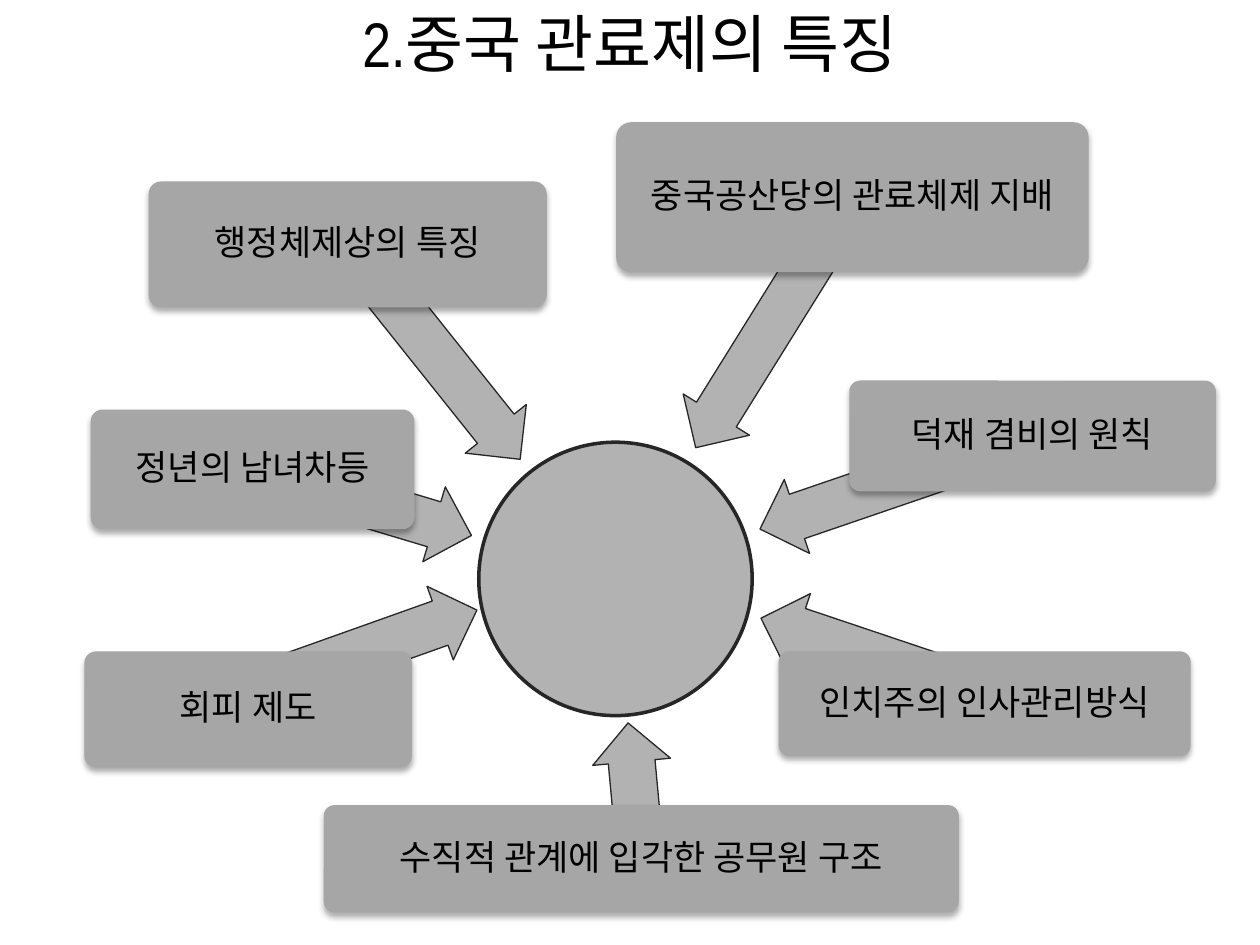
import pptx
import pptx.util
import pptx.oxml
import pptx.dml.color
import pptx.enum.shapes
import pptx.enum.text
from lxml import etree

Inches = pptx.util.Inches
Pt = pptx.util.Pt
SHAPE = pptx.enum.shapes.MSO_SHAPE
KOREAN = "Noto Sans CJK KR"
A = "http://schemas.openxmlformats.org/drawingml/2006/main"

HUB = (3.8, 3.51, 2.17, 2.17)
ARROW_HEIGHT = 0.62

# label, box (left, top, width, height), arrow (left, top, width, rotation)
FEATURES = [
    ("수직적 관계에 입각한 공무원 구조", (2.57, 6.39, 5.04, 0.85), (4.49, 5.97, 1.09, 84.7)),
    ("회피 제도", (0.67, 5.17, 2.6, 0.92), (1.94, 4.85, 1.9, 160.4)),
    ("정년의 남녀차등", (0.72, 3.25, 2.57, 0.95), (1.97, 3.68, 1.81, 196.7)),
    ("행정체제상의 특징", (1.18, 1.44, 3.16, 1), (2.35, 2.48, 2.19, 231.4)),
    ("중국공산당의 관료체제 지배", (4.89, 0.97, 3.75, 1.19), (4.97, 2.25, 2.34, 301.9)),
    ("덕재 겸비의 원칙", (6.74, 3.02, 2.91, 0.88), (5.97, 3.52, 2.28, 341.1)),
    ("인치주의 인사관리방식", (6.18, 5.17, 3.27, 0.83), (5.99, 4.9, 1.9, 18.6)),
]


def color(value):
    return pptx.dml.color.RGBColor.from_string(value)


def add_shape(s, kind, box, fill, line_width=0):
    sp = s.shapes.add_shape(kind, *map(Inches, box))
    sp.shadow.inherit = False
    sp.fill.solid()
    sp.fill.fore_color.rgb = color(fill)
    if line_width:
        sp.line.color.rgb = color("262626")
        sp.line.width = Pt(line_width)
    else:
        sp.line.fill.background()
    return sp


def set_text(sp, text, size, font, margin):
    tf = sp.text_frame
    tf.word_wrap = True
    tf.vertical_anchor = pptx.enum.text.MSO_ANCHOR.MIDDLE
    tf.margin_left = tf.margin_right = Inches(margin)
    tf.margin_top = tf.margin_bottom = Inches(0.04)
    p = tf.paragraphs[0]
    p.text = text
    p.alignment = pptx.enum.text.PP_ALIGN.CENTER
    p.font.size = Pt(size)
    p.font.name = font
    p.font.color.rgb = color("000000")
    # Hangul takes the East Asian typeface
    ea = etree.SubElement(p.font._element, f"{{{A}}}ea")
    ea.set("typeface", KOREAN)
    return p


def add_soft_shadow(sp):
    effects = sp._element.spPr.find(f"{{{A}}}effectLst")
    effects.append(pptx.oxml.parse_xml(
        f'<a:outerShdw xmlns:a="{A}" blurRad="{Pt(3.5)}" dist="{Pt(2.2)}" '
        'dir="5400000" algn="ctr" rotWithShape="0">'
        '<a:srgbClr val="000000"><a:alpha val="32000"/></a:srgbClr></a:outerShdw>'))


def add_title(s, text):
    sp = s.shapes.add_textbox(0, 0, Inches(10), Inches(0.67))
    set_text(sp, text, 36, "Arial Narrow", 0.1)


def add_arrow(s, left, top, width, rotation):
    sp = add_shape(s, SHAPE.LEFT_ARROW, (left, top, width, ARROW_HEIGHT), "B2B2B2", 0.75)
    sp.adjustments[0] = 0.6
    sp.adjustments[1] = 0.5
    sp.rotation = rotation


def add_feature_box(s, text, box):
    sp = add_shape(s, SHAPE.ROUNDED_RECTANGLE, box, "A6A6A6")
    sp.adjustments[0] = 0.1
    add_soft_shadow(sp)
    set_text(sp, text, 20, KOREAN, 0.04).line_spacing = 0.9


def main():
    prs = pptx.Presentation()
    prs.slide_width = Inches(10)
    prs.slide_height = Inches(7.5)
    s = prs.slides.add_slide(prs.slide_layouts[6])

    add_title(s, "2.중국 관료제의 특징")

    # Central hub with the features pointing at it
    add_shape(s, SHAPE.OVAL, HUB, "B2B2B2", 2)
    for text, box, arrow in FEATURES:
        add_arrow(s, *arrow)
        add_feature_box(s, text, box)

    prs.save("out.pptx")


if __name__ == "__main__":
    main()
